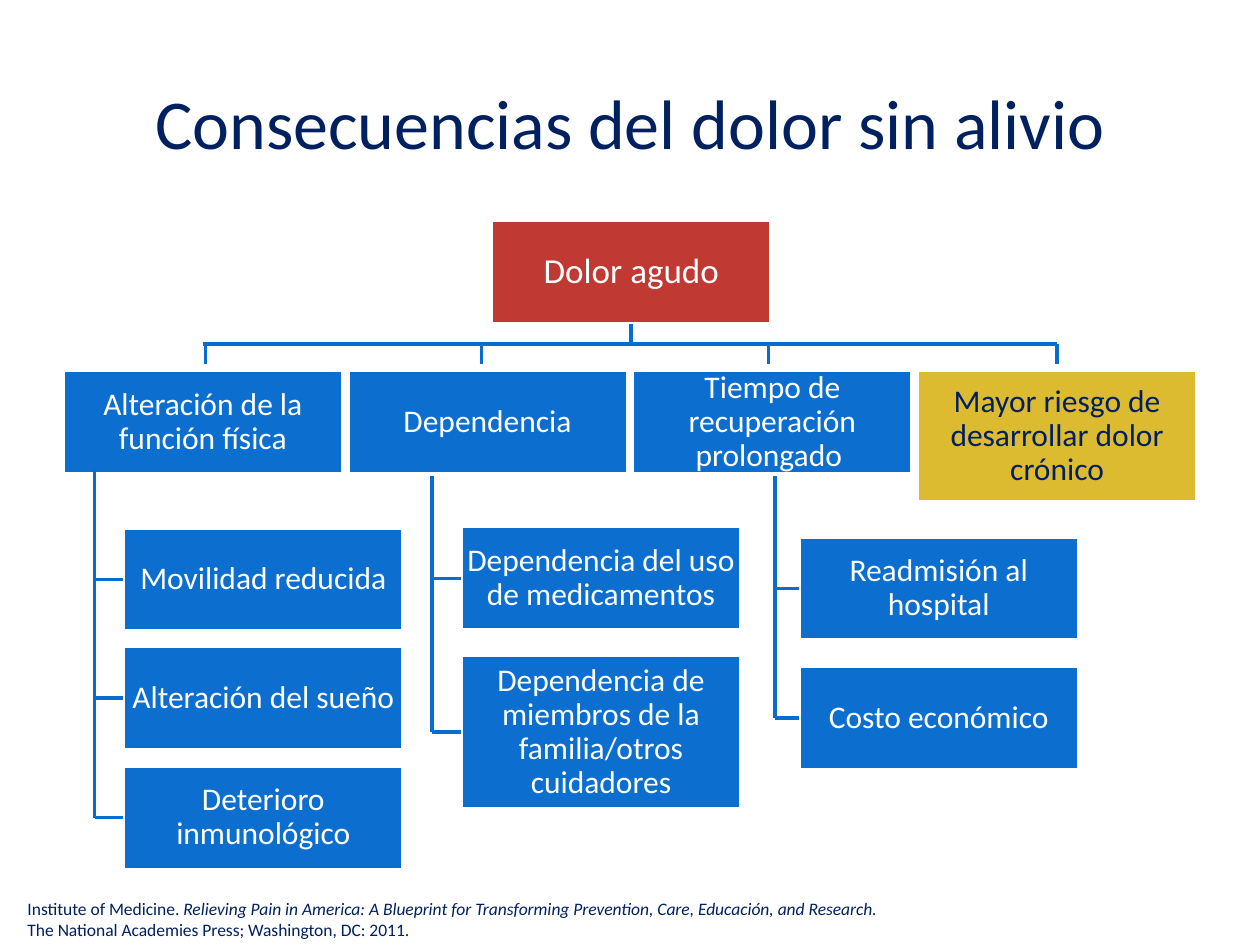
from dataclasses import dataclass

from lxml import etree
from pptx import Presentation
from pptx.dml.color import RGBColor
from pptx.enum.shapes import MSO_CONNECTOR, MSO_SHAPE
from pptx.enum.text import MSO_ANCHOR, MSO_AUTO_SIZE, PP_ALIGN
from pptx.oxml.ns import qn
from pptx.util import Inches, Pt

STRAIGHT = MSO_CONNECTOR.STRAIGHT
RECTANGLE = MSO_SHAPE.RECTANGLE
MIDDLE = MSO_ANCHOR.MIDDLE
CENTER = PP_ALIGN.CENTER
FIT_SHAPE = MSO_AUTO_SIZE.SHAPE_TO_FIT_TEXT
NO_FIT = MSO_AUTO_SIZE.NONE
LEFT_SIDE, BOTTOM_SIDE = 1, 2


@dataclass(frozen=True)
class Theme:
    """Colours and type sizes of the slide."""
    font: str = "Calibri"
    navy: RGBColor = RGBColor(0x00, 0x20, 0x60)
    white: RGBColor = RGBColor(0xFF, 0xFF, 0xFF)
    red: RGBColor = RGBColor(0xC0, 0x39, 0x32)
    blue: RGBColor = RGBColor(0x0C, 0x6F, 0xCF)
    gold: RGBColor = RGBColor(0xDD, 0xBB, 0x30)
    branch: RGBColor = RGBColor(0x07, 0x6D, 0xCF)
    title_size: int = 40
    root_size: int = 20
    box_size: int = 18
    source_size: int = 10
    line_width: int = 2


THEME = Theme()
BOX_WIDTH, BOX_HEIGHT = 2.22, 0.82
ROOT_LEFT, ROOT_TOP = 3.9, 1.75
CAUSE_LEFT, CAUSE_TOP, CAUSE_PITCH = 0.5, 2.94, 2.26
RAIL_LEFT, RAIL_RIGHT, RAIL_Y, DROP_END = 1.61, 8.39, 2.73, 2.89
DROP_XS = (1.63, 3.82, 6.1, 8.39)

CAUSES = (
    ("Alteración de la función física", THEME.blue, THEME.white, BOX_HEIGHT),
    ("Dependencia", THEME.blue, THEME.white, BOX_HEIGHT),
    ("Tiempo de recuperación prolongado ", THEME.blue, THEME.white, BOX_HEIGHT),
    ("Mayor riesgo de desarrollar dolor crónico", THEME.gold, THEME.navy, 1.04),
)
EFFECT_GROUPS = (
    (0.75, 3.72, 0.98, (
        ("Movilidad reducida", 4.19, BOX_HEIGHT),
        ("Alteración del sueño", 5.13, BOX_HEIGHT),
        ("Deterioro inmunológico", 6.08, BOX_HEIGHT),
    )),
    (3.43, 3.78, 3.66, (
        ("Dependencia del uso de medicamentos", 4.18, BOX_HEIGHT),
        ("Dependencia de miembros de la familia/otros cuidadores", 5.2, 1.22),
    )),
    (6.15, 3.78, 6.34, (
        ("Readmisión al hospital", 4.26, BOX_HEIGHT),
        ("Costo económico", 5.29, BOX_HEIGHT),
    )),
)


def style_font(font, size, color):
    """Apply the theme typeface with a size and colour."""
    font.name = THEME.font
    font.size = Pt(size)
    font.color.rgb = color


def add_title(slide, text):
    """Place and format the title placeholder."""
    title = slide.shapes.title
    title.left, title.top = Inches(0.5), Inches(0.39)
    title.width, title.height = Inches(9), Inches(1.25)
    frame = title.text_frame
    frame.text = text
    frame.auto_size = NO_FIT
    frame.vertical_anchor = MIDDLE
    paragraph = frame.paragraphs[0]
    paragraph.alignment = CENTER
    paragraph.line_spacing = 0.85
    style_font(paragraph.runs[0].font, THEME.title_size, THEME.navy)


def add_box(slide, text, left, top, height=BOX_HEIGHT, fill=THEME.blue,
            color=THEME.white, size=THEME.box_size):
    """Add one labelled box of the tree."""
    box = slide.shapes.add_shape(RECTANGLE, Inches(left), Inches(top),
                                 Inches(BOX_WIDTH), Inches(height))
    box.shadow.inherit = False
    box.fill.solid()
    box.fill.fore_color.rgb = fill
    box.line.color.rgb = THEME.white
    box.line.width = Pt(THEME.line_width)
    frame = box.text_frame
    frame.text = text
    frame.word_wrap = True
    frame.vertical_anchor = MIDDLE
    frame.margin_left = frame.margin_right = Inches(0.01)
    frame.margin_top = frame.margin_bottom = Inches(0.01)
    paragraph = frame.paragraphs[0]
    paragraph.alignment = CENTER
    paragraph.line_spacing = 0.9
    style_font(paragraph.runs[0].font, size, color)
    return box


def add_branch(slide, x1, y1, x2, y2):
    """Add one straight line of the tree."""
    branch = slide.shapes.add_connector(STRAIGHT, Inches(x1), Inches(y1),
                                        Inches(x2), Inches(y2))
    branch.line.color.rgb = THEME.branch
    branch.line.width = Pt(THEME.line_width)
    etree.SubElement(branch._element.spPr, qn("a:effectLst"))
    return branch


def add_causes(slide, root):
    """Add the second level and the rail that hangs it from the root."""
    for column, (text, fill, color, height) in enumerate(CAUSES):
        add_box(slide, text, CAUSE_LEFT + column * CAUSE_PITCH, CAUSE_TOP,
                height, fill, color)
    add_branch(slide, RAIL_LEFT, RAIL_Y, RAIL_RIGHT, RAIL_Y)
    trunk_x = ROOT_LEFT + BOX_WIDTH / 2
    trunk = add_branch(slide, trunk_x, ROOT_TOP + BOX_HEIGHT, trunk_x, RAIL_Y)
    trunk.begin_connect(root, BOTTOM_SIDE)
    for drop_x in DROP_XS:
        add_branch(slide, drop_x, RAIL_Y, drop_x, DROP_END)


def add_effects(slide, spine_x, spine_top, left, effects):
    """Add the boxes under one cause, joined to a shared spine."""
    for text, top, height in effects:
        effect = add_box(slide, text, left, top, height)
        middle = top + height / 2
        twig = add_branch(slide, spine_x, middle, left, middle)
        twig.end_connect(effect, LEFT_SIDE)
    add_branch(slide, spine_x, spine_top, spine_x, middle)


def add_source(slide):
    """Add the reference at the foot of the slide."""
    source = slide.shapes.add_textbox(Inches(0.12), Inches(7.08),
                                      Inches(9), Inches(0.44))
    frame = source.text_frame
    frame.word_wrap = True
    frame.auto_size = FIT_SHAPE
    paragraph = frame.paragraphs[0]
    paragraph.text = (
        "Institute of Medicine. ")
    work = paragraph.add_run()
    work.text = ("Relieving Pain in America: A Blueprint for Transforming "
                 "Prevention, Care, Educación, and Research. ")
    paragraph.add_line_break()
    paragraph.add_run().text = "The National Academies Press; Washington, DC: 2011."
    for run in paragraph.runs:
        style_font(run.font, THEME.source_size, THEME.navy)
    work.font.italic = True


def main():
    """Build the slide and save it."""
    presentation = Presentation()
    presentation.slide_width = Inches(10)
    presentation.slide_height = Inches(7.5)
    slide = presentation.slides.add_slide(presentation.slide_layouts[5])
    add_title(slide, "Consecuencias del dolor sin alivio")
    root = add_box(slide, "Dolor agudo", ROOT_LEFT, ROOT_TOP,
                   fill=THEME.red, size=THEME.root_size)
    add_causes(slide, root)
    for group in EFFECT_GROUPS:
        add_effects(slide, *group)
    add_source(slide)
    presentation.save("out.pptx")


if __name__ == "__main__":
    main()
